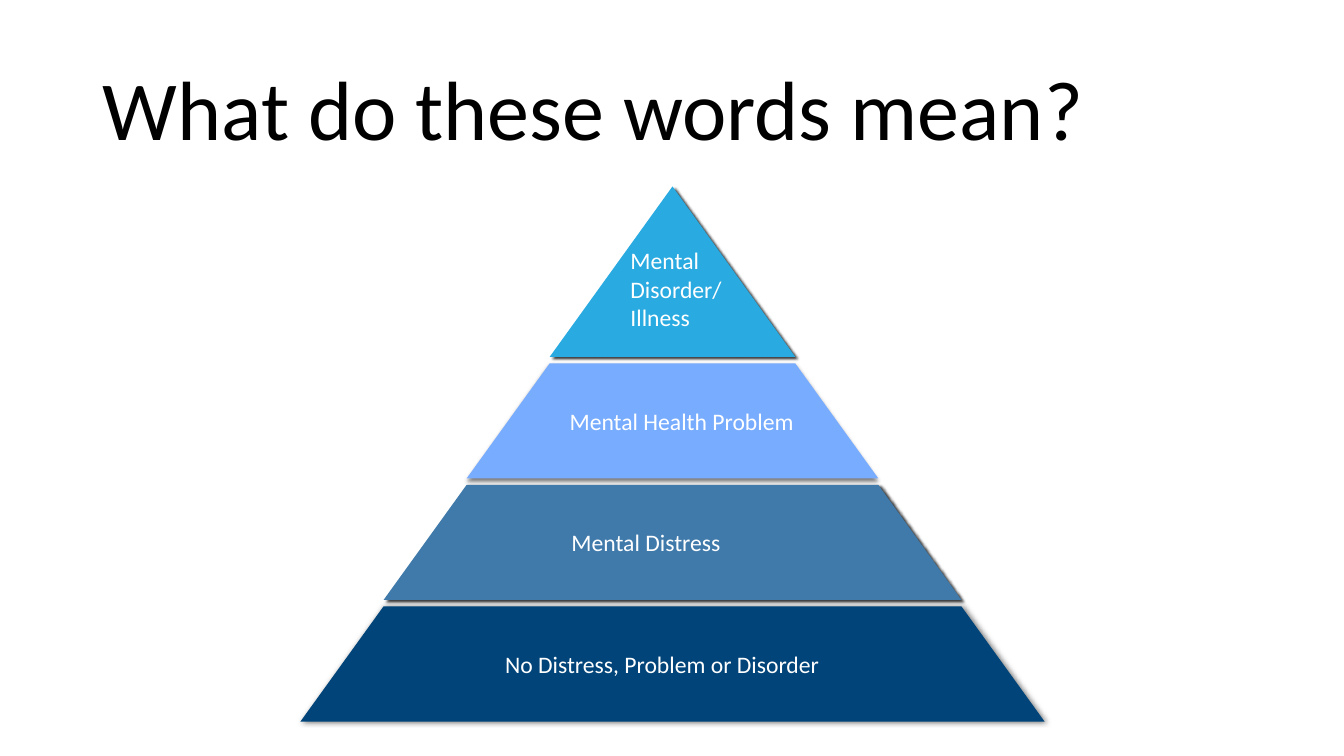
from lxml.etree import SubElement
from pptx import Presentation
from pptx.dml.color import RGBColor
from pptx.enum.text import MSO_ANCHOR, MSO_AUTO_SIZE, PP_ALIGN
from pptx.oxml.ns import qn
from pptx.util import Inches, Pt

SLIDE_W, SLIDE_H = Inches(13.33), Inches(7.5)
COLORS = {"title": "000000", "label": "FFFFFF", "shadow": "000000",
          "illness": "29AAE1", "problem": "78ACFF",
          "distress": "407AAA", "none": "004479"}

# Colour, label, label start as share of the tier's width,
# shadow (opacity %, blur pt, distance pt, direction in degrees)
TIERS = [
    ("illness", "", 0, (79, 2, 2, 40)),
    ("problem", "Mental Health Problem", 0.25, (50, 3, 2, 90)),
    ("distress", "Mental Distress", 0.325, (79, 2, 2, 40)),
    ("none", "No Distress, Problem or Disorder", 0.275, (50, 4, 1, 0)),
]
APEX_HEIGHT, TIER_PITCH, GAP = 0.325, 0.2275, 0.012  # shares of pyramid height
APEX_WIDTH = 0.33  # share of pyramid width


def write(shape, text, size=16.9, color="label", left=Inches(0.04),
          inset=Inches(0.04), spacing=1.0):
    frame = shape.text_frame
    frame.word_wrap = True
    frame.auto_size = MSO_AUTO_SIZE.NONE
    frame.vertical_anchor = MSO_ANCHOR.MIDDLE
    frame.margin_left = left
    frame.margin_top = frame.margin_right = frame.margin_bottom = inset
    paragraph = frame.paragraphs[0]
    paragraph.alignment = PP_ALIGN.LEFT
    paragraph.line_spacing = spacing
    run = paragraph.add_run()
    run.text = text
    run.font.name = "Calibri"
    run.font.size = Pt(size)
    run.font.color.rgb = RGBColor.from_string(COLORS[color])


def add_shadow(shape, opacity, blur, distance, direction):
    shape.shadow.inherit = False
    effects = shape._element.spPr.find(qn("a:effectLst"))
    outer = SubElement(effects, qn("a:outerShdw"), blurRad=str(Pt(blur)),
                       dist=str(Pt(distance)), dir=str(direction * 60000),
                       algn="ctr", rotWithShape="0")
    tint = SubElement(outer, qn("a:srgbClr"), val=COLORS["shadow"])
    SubElement(tint, qn("a:alpha"), val=str(opacity * 1000))


def add_title(slide, text, left, top, width, height):
    title = slide.shapes.title
    title.left, title.top, title.width, title.height = left, top, width, height
    write(title, text, size=60, color="title", left=Inches(0.1),
          inset=Inches(0.05), spacing=0.9)


def add_tier(slide, color, label, label_start, shadow, corners):
    builder = slide.shapes.build_freeform(*corners[0])
    builder.add_line_segments(corners[1:], close=True)
    tier = builder.convert_to_shape()
    tier.fill.solid()
    tier.fill.fore_color.rgb = RGBColor.from_string(COLORS[color])
    tier.line.fill.background()
    add_shadow(tier, *shadow)
    if label:
        write(tier, label, left=int(tier.width * label_start))


def add_pyramid(slide, left, top, width, height):
    center = left + width / 2
    upper, upper_half = top, 0
    for row, (color, label, label_start, shadow) in enumerate(TIERS):
        seam = top + height * (APEX_HEIGHT + row * TIER_PITCH)
        lower = seam - height * GAP / 2
        share = APEX_WIDTH + row * (1 - APEX_WIDTH) / (len(TIERS) - 1)
        lower_half = width / 2 * share
        corners = [(center - upper_half, upper), (center - lower_half, lower),
                   (center + lower_half, lower)]
        if upper_half:
            corners.append((center + upper_half, upper))
        corners = [(round(x), round(y)) for x, y in corners]
        add_tier(slide, color, label, label_start, shadow, corners)
        upper, upper_half = seam + height * GAP / 2, lower_half

    apex_label = slide.shapes.add_textbox(
        int(left + 0.438 * width), int(top + 0.104 * height),
        int(0.21 * width), int(0.175 * height))
    write(apex_label, "Mental Disorder/ Illness")


def main():
    deck = Presentation()
    deck.slide_width, deck.slide_height = SLIDE_W, SLIDE_H
    slide = deck.slides.add_slide(deck.slide_layouts.get_by_name("Title Only"))
    add_title(slide, "What do these words mean?",
              Inches(0.92), Inches(0.4), Inches(11.5), Inches(1.45))
    add_pyramid(slide, Inches(2.98), Inches(1.85), Inches(7.38), Inches(5.3))
    deck.save("out.pptx")


if __name__ == "__main__":
    main()
